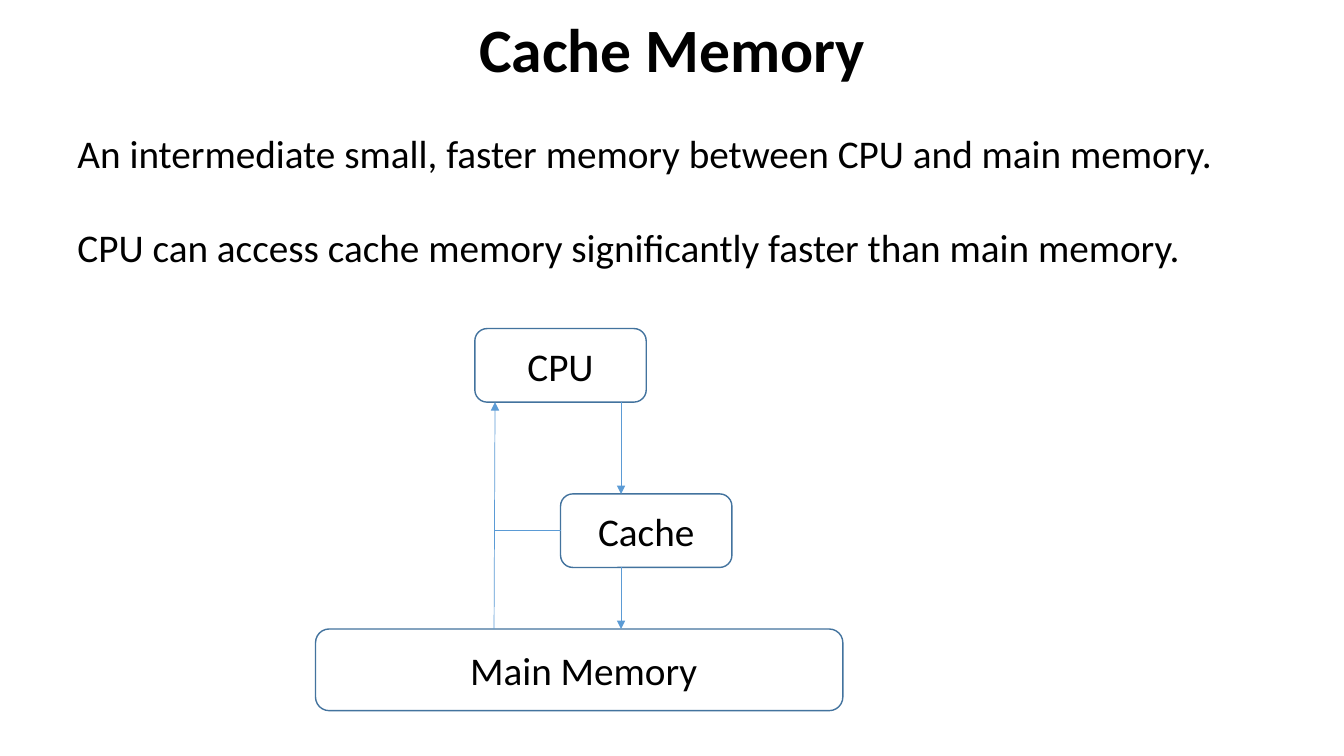
from lxml import etree
from pptx import Presentation
from pptx.dml.color import RGBColor
from pptx.enum.shapes import MSO_CONNECTOR, MSO_SHAPE
from pptx.enum.text import MSO_ANCHOR, MSO_AUTO_SIZE, PP_ALIGN
from pptx.oxml.ns import qn
from pptx.util import Inches, Pt

TITLE = "Cache Memory"
STATEMENTS = [
    "An intermediate small, faster memory between CPU and main memory.",
    "CPU can access cache memory significantly faster than main memory.",
]
# label: left, top, width, height
UNITS = {
    "CPU": (4.71, 3.26, 1.7, 0.73),
    "Cache": (5.56, 4.9, 1.7, 0.73),
    " Main Memory": (3.13, 6.24, 5.23, 0.81),
}
REQUEST_X, REPLY_X = 6.16, 4.91
FONT = "Calibri"
BLACK, OUTLINE, FLOW = "000000", "43739E", "5B9BD5"


def rgb(color):
    return RGBColor.from_string(color)


def style_text(paragraph, size, bold=False):
    for run in paragraph.runs:
        run.font.name = FONT
        run.font.size = Pt(size)
        run.font.bold = bold
        run.font.color.rgb = rgb(BLACK)


def add_unit(slide, label, box):
    unit = slide.shapes.add_shape(MSO_SHAPE.ROUNDED_RECTANGLE, *map(Inches, box))
    unit.shadow.inherit = False
    unit.fill.background()
    unit.line.color.rgb = rgb(OUTLINE)
    unit.line.width = Pt(1)
    frame = unit.text_frame
    frame.text = label
    frame.vertical_anchor = MSO_ANCHOR.MIDDLE
    frame.paragraphs[0].alignment = PP_ALIGN.CENTER
    style_text(frame.paragraphs[0], 28)


def add_flow(slide, start, end, arrow=True):
    flow = slide.shapes.add_connector(
        MSO_CONNECTOR.STRAIGHT, *map(Inches, (*start, *end)))
    flow.line.color.rgb = rgb(FLOW)
    flow.line.width = Pt(0.5)
    properties = flow.element.spPr
    if arrow:
        outline = properties.find(qn("a:ln"))
        etree.SubElement(outline, qn("a:tailEnd"), type="triangle")
    etree.SubElement(properties, qn("a:effectLst"))


def main():
    deck = Presentation()
    deck.slide_width, deck.slide_height = Inches(13.33), Inches(7.5)
    slide = deck.slides.add_slide(deck.slide_layouts.get_by_name("Title Only"))

    title = slide.shapes.title
    title.left, title.top, title.width, title.height = map(
        Inches, (0.92, 0.09, 11.5, 0.86))
    title.text_frame.text = TITLE
    title.text_frame.auto_size = MSO_AUTO_SIZE.NONE
    title.text_frame.vertical_anchor = MSO_ANCHOR.MIDDLE
    heading = title.text_frame.paragraphs[0]
    heading.alignment = PP_ALIGN.CENTER
    heading.line_spacing = 0.9
    style_text(heading, 44, bold=True)

    summary = slide.shapes.add_textbox(
        *map(Inches, (0.67, 1.23, 11.49, 1.51))).text_frame
    summary.word_wrap = True
    summary.text = "\n".join(STATEMENTS)
    for statement in summary.paragraphs:
        style_text(statement, 28)
    summary.paragraphs[-1].space_before = Pt(34)

    for label, box in UNITS.items():
        add_unit(slide, label, box)

    cpu, cache, memory = UNITS.values()
    for upper, lower in ((cpu, cache), (cache, memory)):
        add_flow(slide, (REQUEST_X, upper[1] + upper[3]), (REQUEST_X, lower[1]))
    cache_middle = cache[1] + cache[3] / 2
    add_flow(slide, (cache[0], cache_middle), (REPLY_X, cache_middle), arrow=False)
    add_flow(slide, (REPLY_X - 0.01, memory[1]), (REPLY_X, cpu[1] + cpu[3]))

    deck.save("out.pptx")


if __name__ == "__main__":
    main()
